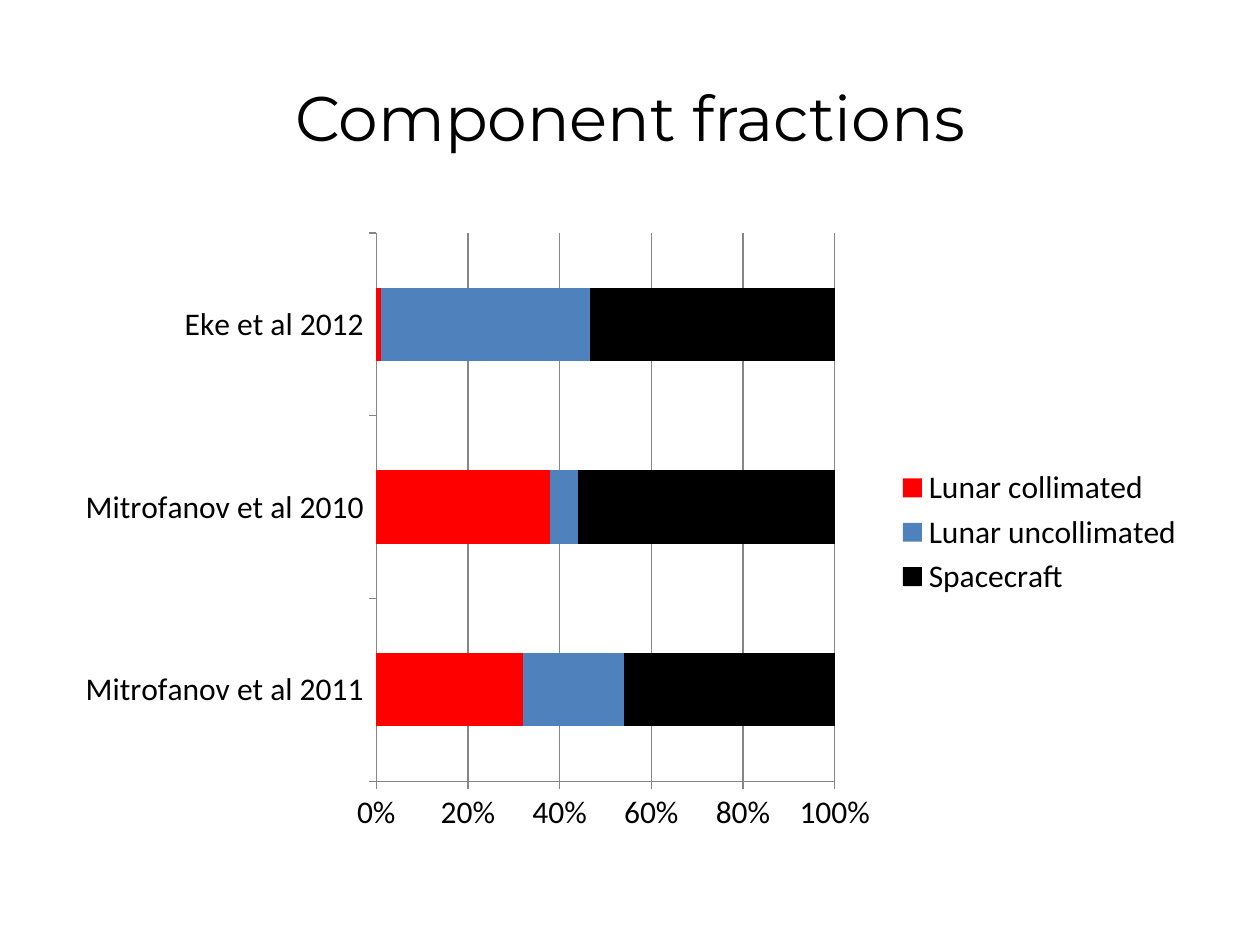
from pptx import Presentation
from pptx.chart.data import CategoryChartData
from pptx.dml.color import RGBColor
from pptx.enum import chart as ch, text
from pptx.util import Inches, Pt

COLORS = {"text": "000000", "line": "868686", "collimated": "FF0000",
          "uncollimated": "4F81BD", "spacecraft": "000000"}
STUDIES = ["Mitrofanov et al 2011", "Mitrofanov et al 2010", "Eke et al 2012"]
COMPONENTS = [
    ("Lunar collimated", (32, 38, 1), "collimated"),
    ("Lunar uncollimated", (22, 6, 46), "uncollimated"),
    ("Spacecraft", (46, 56, 54), "spacecraft"),
]


def rgb(name):
    return RGBColor.from_string(COLORS[name])


def style_font(font, face, size):
    font.name = face
    font.size = Pt(size)
    font.bold = False
    font.color.rgb = rgb("text")


def style_line(line):
    line.color.rgb = rgb("line")
    line.width = Pt(0.75)


def add_title(s, title):
    sp = s.shapes.title
    sp.left, sp.top, sp.width, sp.height = map(Inches, (0.5, 0.3, 9, 1.25))
    tf = sp.text_frame
    tf.vertical_anchor = text.MSO_ANCHOR.MIDDLE
    p = tf.paragraphs[0]
    p.alignment = text.PP_ALIGN.CENTER
    r = p.add_run()
    r.text = title
    style_font(r.font, "Montserrat", 36)


def add_fraction_chart(s):
    data = CategoryChartData(number_format="General")
    data.categories = STUDIES
    for name, values, _ in COMPONENTS:
        data.add_series(name, values)
    chart = s.shapes.add_chart(
        ch.XL_CHART_TYPE.BAR_STACKED_100, Inches(0.5), Inches(1.75),
        Inches(9), Inches(4.95), data).chart
    style_font(chart.font, "Calibri", 18)
    chart.has_title = False

    chart.has_legend = True
    chart.legend.position = ch.XL_LEGEND_POSITION.RIGHT
    chart.legend.include_in_layout = False

    plot = chart.plots[0]
    plot.vary_by_categories = False
    plot.gap_width = 150
    plot.overlap = 100
    for series, (_, _, color) in zip(plot.series, COMPONENTS):
        series.format.fill.solid()
        series.format.fill.fore_color.rgb = rgb(color)

    for axis in (chart.category_axis, chart.value_axis):
        axis.major_tick_mark = ch.XL_TICK_MARK.OUTSIDE
        axis.minor_tick_mark = ch.XL_TICK_MARK.NONE
        style_line(axis.format.line)
    chart.category_axis.has_major_gridlines = False
    value_axis = chart.value_axis
    value_axis.has_major_gridlines = True
    style_line(value_axis.major_gridlines.format.line)
    value_axis.minimum_scale, value_axis.maximum_scale = 0, 1
    value_axis.major_unit = 0.2
    value_axis.tick_labels.number_format = "0%"
    value_axis.tick_labels.number_format_is_linked = False


def main():
    prs = Presentation()
    prs.slide_width, prs.slide_height = Inches(10), Inches(7.5)
    s = prs.slides.add_slide(prs.slide_layouts[5])
    add_title(s, "Component fractions")
    add_fraction_chart(s)
    prs.save("out.pptx")


if __name__ == "__main__":
    main()
